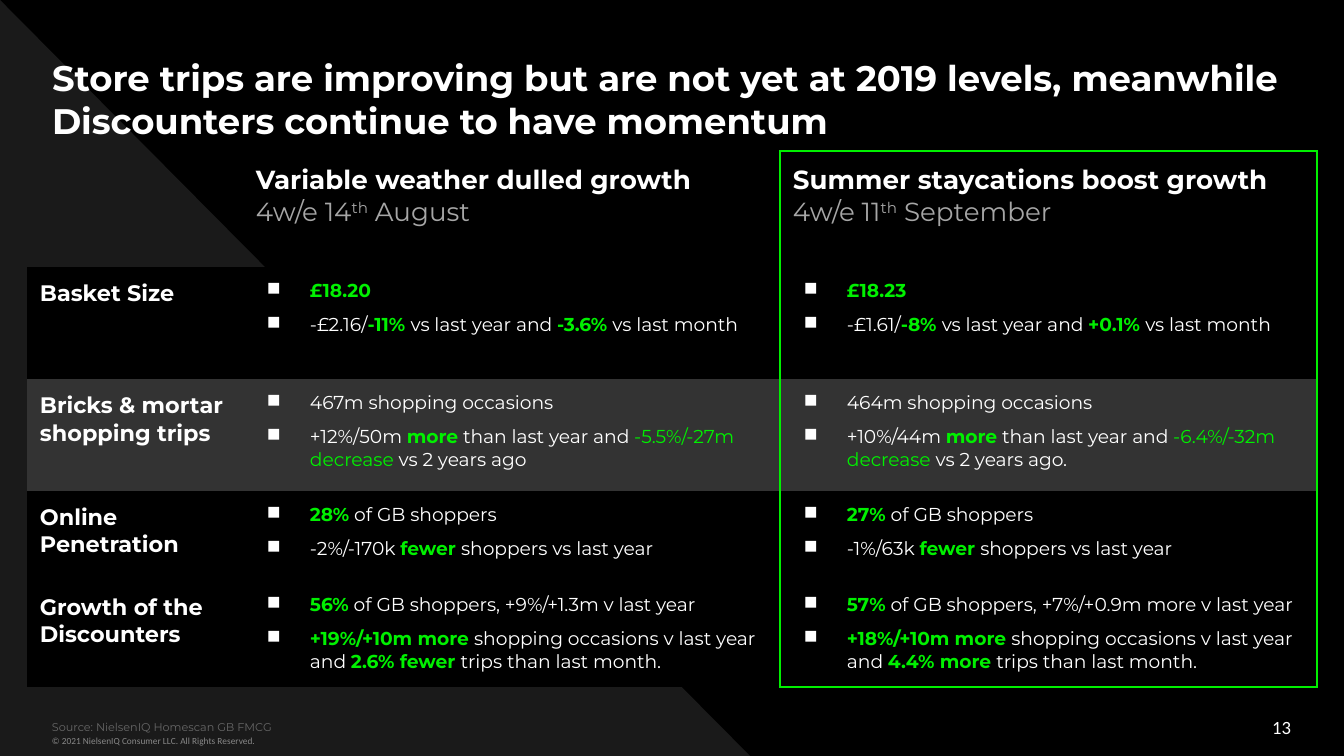
from lxml import etree
from pptx import Presentation
from pptx.dml.color import RGBColor
from pptx.enum.shapes import MSO_SHAPE as Shape
from pptx.enum.text import MSO_ANCHOR as Anchor, PP_ALIGN as Align
from pptx.oxml.ns import qn
from pptx.util import Emu, Pt

GREEN, WHITE, BLACK, GREY = "00F000", "FFFFFF", "000000", "A6A6A6"
color = RGBColor.from_string


def px(value):
    return Emu(round(value * 914400 / 134.4))


def add_run(paragraph, text, size, hex_color, bold=False, font="Montserrat"):
    run = paragraph.add_run()
    run.text = text
    run.font.name = font
    run.font.size = Pt(size)
    run.font.bold = bold
    run.font.color.rgb = color(hex_color)
    return run


presentation = Presentation()
presentation.slide_width, presentation.slide_height = px(1344), px(756)
slide = presentation.slides.add_slide(presentation.slide_layouts[6])
slide.background.fill.solid()
slide.background.fill.fore_color.rgb = color(BLACK)

triangle = slide.shapes.add_shape(Shape.RIGHT_TRIANGLE, 0, 0, px(751), px(757))
triangle.shadow.inherit = False
triangle.fill.solid()
triangle.fill.fore_color.rgb = color("1A1A1A")
triangle.line.fill.background()

title = "Store trips are improving but are not yet at 2019 levels, meanwhile Discounters continue to have momentum"
text_boxes = [
    ("© 2021 NielsenIQ Consumer LLC. All Rights Reserved.", (52, 730, 745, 27), 7, Anchor.TOP, Align.LEFT, (5, "888888", False, "Calibri")),
    ("13", (989, 707, 302, 40), 7, Anchor.MIDDLE, Align.RIGHT, (10, WHITE, False, "Calibri")),
    ("Source: NielsenIQ Homescan GB FMCG", (52, 714, 1199, 27), 13, Anchor.BOTTOM, Align.LEFT, (6, "666666")),
    (title, (52, 43, 1274, 99), 13, Anchor.TOP, Align.LEFT, (19, WHITE, True)),
]
for text, box, inset, anchor, alignment, style in text_boxes:
    text_frame = slide.shapes.add_textbox(*map(px, box)).text_frame
    text_frame.word_wrap = True
    text_frame.margin_left = text_frame.margin_right = 0
    text_frame.margin_top = text_frame.margin_bottom = px(inset)
    text_frame.vertical_anchor = anchor
    text_frame.paragraphs[0].alignment = alignment
    add_run(text_frame.paragraphs[0], text, *style)

periods = [
    ("Variable weather dulled growth", "4w/e 14", " August"),
    ("Summer staycations boost growth", "4w/e 11", " September"),
]
topics = [
    ("Basket Size", BLACK,
     ["*£18.20", "-£2.16/|*-11% |vs last year and |*-3.6% |vs last month"],
     ["*£18.23", "-£1.61/|*-8% |vs last year and |*+0.1% |vs last month"]),
    ("Bricks & mortar shopping trips", "333333",
     ["467m shopping occasions",
      "+12%/50m |*more| than last year and |~-5.5%/-27m decrease |vs 2 years ago"],
     ["464m shopping occasions",
      "+10%/44m |*more| than last year and |~-6.4%/-32m decrease |vs 2 years ago."]),
    ("Online Penetration", BLACK,
     ["*28%| of GB shoppers", "-2%/-170k |*fewer |shoppers vs last year"],
     ["*27%| of GB shoppers", "-1%/63k |*fewer |shoppers vs last year"]),
    ("Growth of the Discounters", BLACK,
     ["*56%| of GB shoppers, +9%/+1.3m v last year",
      "*+19%/+10m more |shopping occasions v last year and |*2.6% fewer |trips than last month."],
     ["*57%| of GB shoppers, +7%/+0.9m more v last year",
      "*+18%/+10m more |shopping occasions v last year and |*4.4% more |trips than last month."]),
]
run_styles = {"*": (GREEN, True), "~": (GREEN, False)}
column_widths = [216, 537, 537]
row_heights = [116, 112, 112, 90, 106]

table = slide.shapes.add_table(
    len(row_heights), len(column_widths), px(27), px(151),
    px(sum(column_widths)), px(sum(row_heights))).table
table.first_row = table.horz_banding = False
for column, width in zip(table.columns, column_widths):
    column.width = px(width)
for row, height in zip(table.rows, row_heights):
    row.height = px(height)

last_row = len(row_heights) - 1
for row_index, row in enumerate(table.rows):
    for column_index, cell in enumerate(row.cells):
        cell.margin_left = cell.margin_right = px(13)
        cell.margin_top = cell.margin_bottom = px(13)
        framed = column_index == 2
        borders = {
            "a:lnL": framed,
            "a:lnR": column_index > 0,
            "a:lnT": framed and row_index == 0,
            "a:lnB": framed and row_index == last_row,
        }
        properties = cell._tc.get_or_add_tcPr()
        for tag, visible in borders.items():
            line = etree.SubElement(properties, qn(tag), w=str(Pt(1)))
            if visible:
                fill = etree.SubElement(line, qn("a:solidFill"))
                etree.SubElement(fill, qn("a:srgbClr"), val=GREEN)
            else:
                etree.SubElement(line, qn("a:noFill"))
        if row_index == 0:
            cell.fill.background()
        else:
            cell.fill.solid()
            cell.fill.fore_color.rgb = color(topics[row_index - 1][1])

for column_index, (heading, day, month) in enumerate(periods, start=1):
    text_frame = table.cell(0, column_index).text_frame
    add_run(text_frame.paragraphs[0], heading, 14, WHITE, True)
    paragraph = text_frame.add_paragraph()
    add_run(paragraph, day, 14, GREY)
    ordinal = add_run(paragraph, "th", 14, GREY)
    ordinal.font._element.set("baseline", "30000")
    add_run(paragraph, month, 14, GREY)

for row_index, (label, _, *columns) in enumerate(topics, start=1):
    add_run(table.cell(row_index, 0).text_frame.paragraphs[0], label, 12, WHITE, True)
    for column_index, bullets in enumerate(columns, start=1):
        text_frame = table.cell(row_index, column_index).text_frame
        for bullet_index, bullet in enumerate(bullets):
            paragraph = text_frame.add_paragraph() if bullet_index else text_frame.paragraphs[0]
            properties = paragraph._p.get_or_add_pPr()
            properties.set("marL", str(px(54)))
            properties.set("indent", str(px(-43)))
            bullet_color = etree.SubElement(properties, qn("a:buClr"))
            etree.SubElement(bullet_color, qn("a:srgbClr"), val=WHITE)
            etree.SubElement(properties, qn("a:buChar"), char="■")
            if bullet_index:
                paragraph.space_before = Pt(6)
            for part in bullet.split("|"):
                style = run_styles.get(part[0], (WHITE, False))
                add_run(paragraph, part.lstrip("*~"), 10, *style)

presentation.save("out.pptx")
